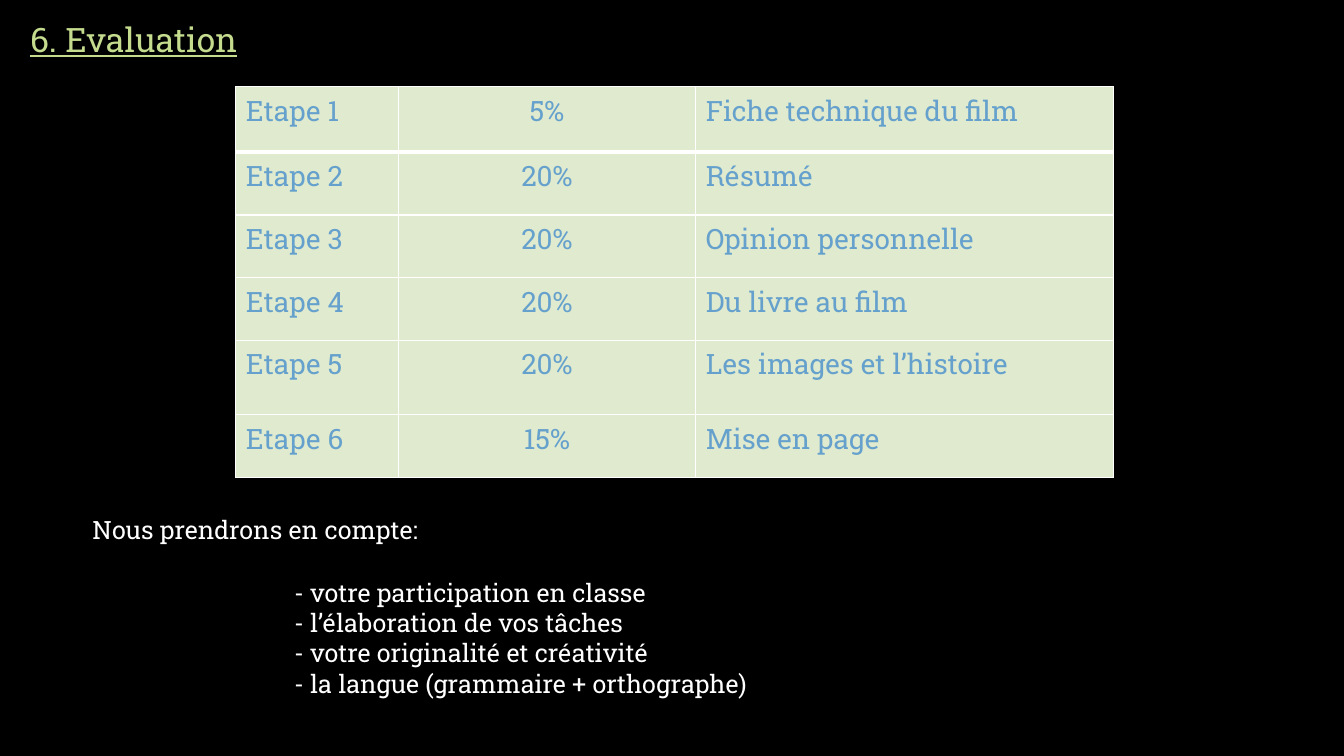
from pptx import Presentation
from pptx import util as u
from pptx.dml.color import RGBColor
from pptx.enum import text
from pptx.oxml import parse_xml
from pptx.oxml.ns import nsdecls

Pt = u.Pt
HUES = {"back": "000000", "title": "C5DC8F", "cell": "DFEACF",
        "step": "65A1CC", "white": "FFFFFF"}
STEPS = [
    ("Etape 1", "5%", "Fiche technique du film"),
    ("Etape 2", "20%", "Résumé"),
    ("Etape 3", "20%", "Opinion personnelle"),
    ("Etape 4", "20%", "Du livre au film"),
    ("Etape 5", "20%", "Les images et l’histoire"),
    ("Etape 6", "15%", "Mise en page"),
]
COLS = [116, 212.5, 298.5]
ROWS = [46.8, 44.8, 44.8, 44.8, 53.2, 44.8]
POINTS = [
    "votre participation en classe",
    "l’élaboration de vos tâches",
    "votre originalité et créativité",
    "la langue (grammaire + orthographe)",
]


class Deck:
    """Holds the style and the current slide."""

    def __init__(self, wide, high):
        self.prs = Presentation()
        self.prs.slide_width, self.prs.slide_height = Pt(wide), Pt(high)
        self.face = "Roboto Slab"

    def hue(self, name):
        return RGBColor.from_string(HUES[name])

    def page(self):
        self.slide = self.prs.slides.add_slide(self.prs.slide_layouts[5])
        fill = self.slide.background.fill
        fill.solid()
        fill.fore_color.rgb = self.hue("back")

    def style(self, para, size, hue, align=text.PP_ALIGN.LEFT):
        para.font.name, para.font.size = self.face, Pt(size)
        para.font.color.rgb = self.hue(hue)
        para.alignment = align

    def title(self, words, x, y, w, h):
        shape = self.slide.shapes.title
        shape.left, shape.top, shape.width, shape.height = map(Pt, (x, y, w, h))
        frame = shape.text_frame
        frame.text = words
        frame.vertical_anchor = text.MSO_ANCHOR.TOP
        frame.auto_size = text.MSO_AUTO_SIZE.SHAPE_TO_FIT_TEXT
        para = frame.paragraphs[0]
        self.style(para, 24, "title")
        para.font.underline = True

    def edge(self, cell, side, width):
        cell._tc.get_or_add_tcPr().append(parse_xml(
            f'<a:ln{side} {nsdecls("a")} w="{Pt(width)}"><a:solidFill>'
            f'<a:srgbClr val="{HUES["white"]}"/></a:solidFill></a:ln{side}>'))

    def table(self, data, x, y, cols, rows):
        grid = self.slide.shapes.add_table(
            len(rows), len(cols), Pt(x), Pt(y), Pt(sum(cols)), Pt(sum(rows))).table
        for col, wide in zip(grid.columns, cols):
            col.width = Pt(wide)
        for r, (row, high) in enumerate(zip(grid.rows, rows)):
            row.height = Pt(high)
            for c, cell in enumerate(row.cells):
                cell.text = data[r][c]
                align = text.PP_ALIGN.CENTER if c == 1 else text.PP_ALIGN.LEFT
                self.style(cell.text_frame.paragraphs[0], 20, "step", align)
                for side in "LRTB":
                    thick = (r, side) in ((0, "B"), (1, "T"))
                    self.edge(cell, side, 3 if thick else 1)
                cell.fill.solid()
                cell.fill.fore_color.rgb = self.hue("cell")

    def notes(self, head, items, x, y, w, h):
        frame = self.slide.shapes.add_textbox(*map(Pt, (x, y, w, h))).text_frame
        frame.word_wrap = True
        frame.auto_size = text.MSO_AUTO_SIZE.SHAPE_TO_FIT_TEXT
        frame.text = head
        self.style(frame.paragraphs[0], 18, "white")
        for i, item in enumerate(items):
            para = frame.add_paragraph()
            para.text = f"- {item}"
            self.style(para, 18, "white")
            para.space_before = Pt(0 if i else 23.5)
            para._p.get_or_add_pPr().set("marL", str(Pt(144)))


def main():
    deck = Deck(960, 540)
    deck.page()
    deck.title("6. Evaluation", 14.4, 10, 460, 36)
    deck.table(STEPS, 168.5, 62, COLS, ROWS)
    deck.notes("Nous prendrons en compte:", POINTS, 59, 363.6, 729.4, 140.4)
    deck.prs.save("out.pptx")


if __name__ == "__main__":
    main()
